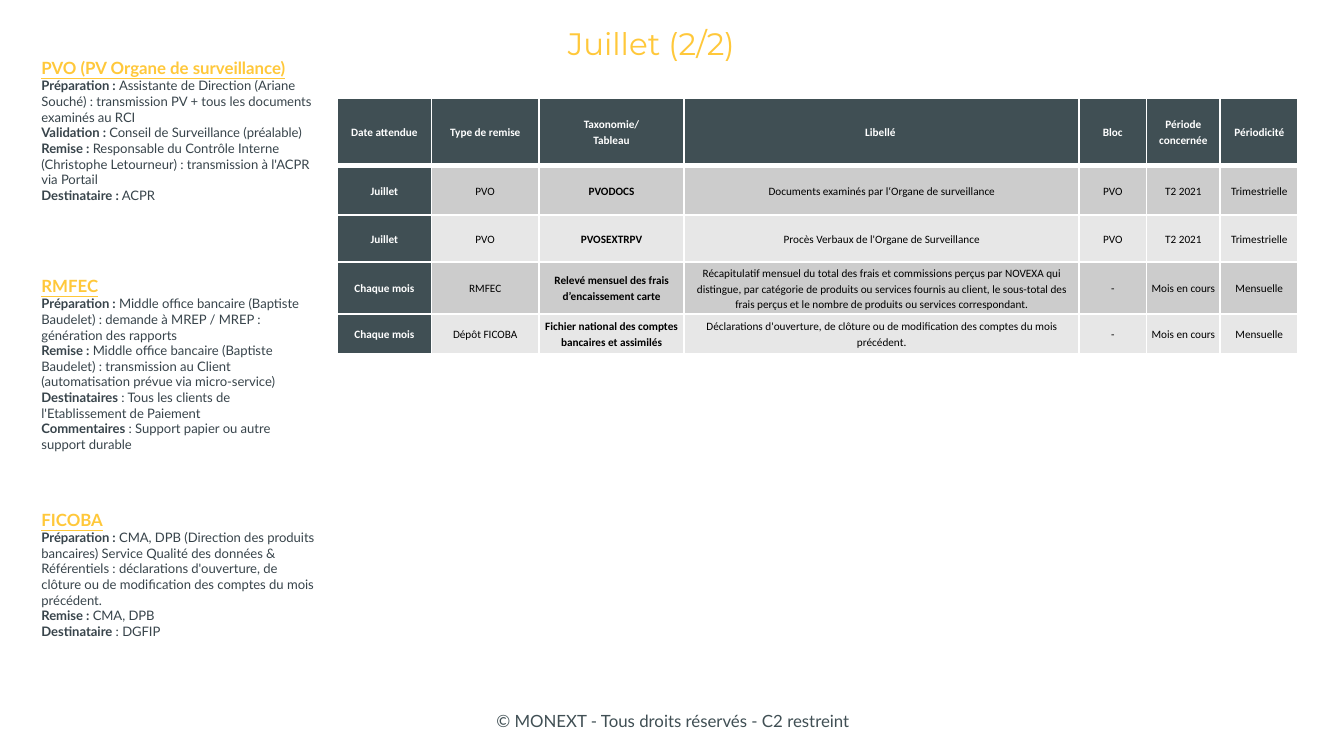
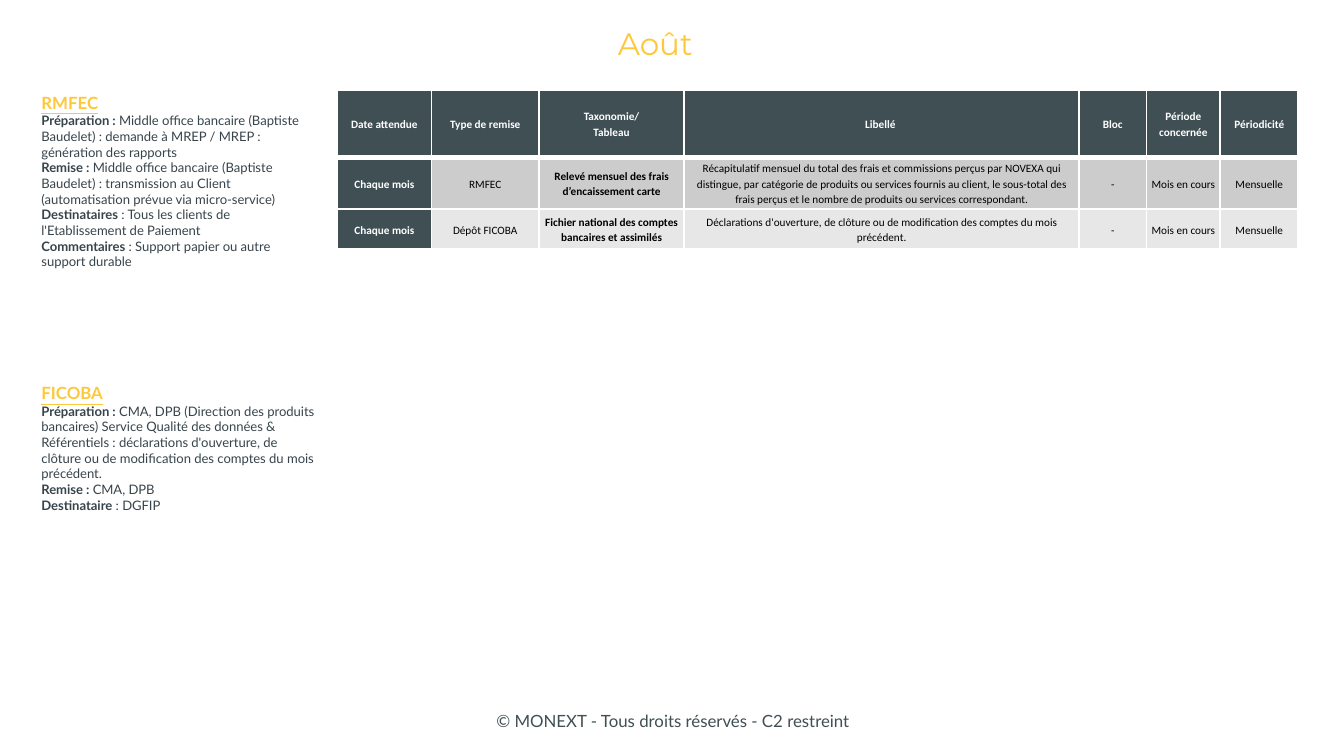
from typing import NamedTuple

from lxml import etree
from pptx import Presentation
from pptx.dml.color import RGBColor
from pptx.enum.text import MSO_ANCHOR, PP_ALIGN
from pptx.oxml.ns import qn
from pptx.util import Emu, Pt

PX = 9144
MIDDLE, TOP = MSO_ANCHOR.MIDDLE, MSO_ANCHOR.TOP
CENTER, LEFT = PP_ALIGN.CENTER, PP_ALIGN.LEFT

YELLOW = RGBColor(0xFF, 0xC8, 0x3A)
SLATE = RGBColor(0x40, 0x4F, 0x54)
INK = RGBColor(0x38, 0x44, 0x4B)
WHITE = RGBColor(0xFF, 0xFF, 0xFF)
BLACK = RGBColor(0, 0, 0)
BANDS = (RGBColor(0xCC, 0xCC, 0xCC), RGBColor(0xE7, 0xE7, 0xE7))

SLIDE_WIDTH = 1000
FOOTER = "© MONEXT - Tous droits réservés - C2 restreint"
HEADERS = ("Date attendue", "Type de remise", "Taxonomie/\nTableau", "Libellé ",
           "Bloc", "Période concernée", "Périodicité")
COLUMN_WIDTHS = (70, 80, 108, 294, 50, 55, 58)
HEADER_HEIGHT = 50
TABLE_LEFT = 251
BOLD_COLUMNS = (0, 2)


class Box(NamedTuple):
    """Place of a text box in px."""
    left: int
    top: int
    width: int
    height: int


class Note(NamedTuple):
    """Side note: a heading and its lines, each a bold label and a plain body."""
    heading: str
    height: int
    lines: tuple[tuple[str, str], ...]
    one_paragraph: bool = False


class Filing(NamedTuple):
    """Table row: its height and the text of its cells."""
    height: int
    cells: tuple[str, ...]


class Month(NamedTuple):
    """Content of one slide; notes are paired with their top."""
    title: str
    notes: tuple[tuple[int, Note], ...]
    table_top: int
    filings: tuple[Filing, ...]


TITLE_BOX = Box(210, 14, 555, 36)
FOOTER_BOX = Box(342, 521, 317, 30)

PVO = Note("PVO (PV Organe de surveillance)", 129, (
    ("Préparation : ", "Assistante de Direction (Ariane Souché) : transmission PV "
     "+ tous les documents examinés au RCI"),
    ("Validation : ", "Conseil de Surveillance (préalable)"),
    ("Remise : ", "Responsable du Contrôle Interne (Christophe Letourneur) : "
     "transmission à l'ACPR via Portail"),
    ("Destinataire :", " ACPR"),
), one_paragraph=True)
RMFEC = Note("RMFEC", 142, (
    ("Préparation :", " Middle office bancaire (Baptiste Baudelet) : demande à MREP "
     "/ MREP : génération des rapports"),
    ("Remise : ", "Middle office bancaire (Baptiste Baudelet) : transmission au "
     "Client (automatisation prévue via micro-service)"),
    ("Destinataires", " : Tous les clients de l'Etablissement de Paiement"),
    ("Commentaires", " : Support papier ou autre support durable"),
))
FICOBA = Note("FICOBA", 107, (
    ("Préparation :", " CMA, DPB (Direction des produits bancaires) Service Qualité "
     "des données & Référentiels : déclarations d'ouverture, de clôture ou de "
     "modification des comptes du mois précédent."),
    ("Remise : ", "CMA, DPB"),
    ("Destinataire", " : DGFIP"),
))

QUARTERLY = ("PVO", "T2 2021", "Trimestrielle")
MONTHLY = ("-", "Mois en cours", "Mensuelle")
QUARTERLY_FILINGS = (
    Filing(37, ("Juillet", "PVO", "PVODOCS",
                "Documents examinés par l‘Organe de surveillance", *QUARTERLY)),
    Filing(35, ("Juillet", "PVO", "PVOSEXTRPV",
                "Procès Verbaux de l'Organe de Surveillance", *QUARTERLY)),
)
MONTHLY_FILINGS = (
    Filing(31, ("Chaque mois", "RMFEC", "Relevé mensuel des frais d’encaissement carte",
                "Récapitulatif mensuel du total des frais et commissions perçus par "
                "NOVEXA qui distingue, par catégorie de produits ou services fournis "
                "au client, le sous-total des frais perçus et le nombre de produits "
                "ou services correspondant.", *MONTHLY)),
    Filing(30, ("Chaque mois", "Dépôt FICOBA",
                "Fichier national des comptes bancaires et assimilés",
                "Déclarations d'ouverture, de clôture ou de modification des comptes "
                "du mois précédent.", *MONTHLY)),
)

MONTHS = (
    Month("Juillet (2/2) ", ((38, PVO), (200, RMFEC), (374, FICOBA)), 73,
          QUARTERLY_FILINGS + MONTHLY_FILINGS),
    Month("Août", ((64, RMFEC), (280, FICOBA)), 67, MONTHLY_FILINGS),
)


def px(length: int) -> Emu:
    """Turn px into EMU."""
    return Emu(length * PX)


def add_span(para, text: str, *, size: float, color: RGBColor, font: str = "Lato",
             bold: bool = False, underline: bool = False) -> None:
    """Append formatted text to a paragraph."""
    span = para.add_run()
    span.text = text
    span.font.name = font
    span.font.size = Pt(size)
    span.font.color.rgb = color
    span.font.bold = bold
    span.font.underline = underline


def add_box(page, place: Box, *, anchor=MIDDLE, align=CENTER):
    """Add a wrapping text box and return its text frame."""
    frame = page.shapes.add_textbox(*map(px, place)).text_frame
    frame.word_wrap = True
    frame.vertical_anchor = anchor
    frame.paragraphs[0].alignment = align
    return frame


def add_note(page, top: int, note: Note) -> None:
    """Draw a side note."""
    frame = add_box(page, Box(21, top, 225, note.height), anchor=TOP, align=LEFT)
    para = frame.paragraphs[0]
    add_span(para, note.heading, size=9, color=YELLOW, bold=True, underline=True)
    for label, body in note.lines:
        if note.one_paragraph:
            para.add_line_break()
        else:
            para = frame.add_paragraph()
        add_span(para, label, size=7, color=INK, bold=True)
        add_span(para, body, size=7, color=INK)


def add_borders(cell, top: int, bottom: int) -> None:
    """Give a cell white borders, with top and bottom widths in points."""
    properties = cell._tc.get_or_add_tcPr()
    for side, width in (("L", 1), ("R", 1), ("T", top), ("B", bottom)):
        line = etree.SubElement(properties, qn(f"a:ln{side}"), w=str(Pt(width)))
        fill = etree.SubElement(line, qn("a:solidFill"))
        etree.SubElement(fill, qn("a:srgbClr"), val=str(WHITE))


def fill_cell(cell, text: str, row: int, column: int) -> None:
    """Style and write one table cell."""
    dark = row == 0 or column == 0
    add_borders(cell, 3 if row == 1 else 1, 3 if row == 0 else 1)
    cell.fill.solid()
    cell.fill.fore_color.rgb = SLATE if dark else BANDS[(row - 1) % 2]
    cell.vertical_anchor = MIDDLE
    cell.margin_left = cell.margin_right = px(3)
    cell.margin_top = cell.margin_bottom = px(2)
    frame = cell.text_frame
    for index, line in enumerate(text.split("\n")):
        para = frame.add_paragraph() if index else frame.paragraphs[0]
        para.alignment = CENTER
        para.line_spacing = 1.15
        add_span(para, line, size=6, font="Calibri", color=WHITE if dark else BLACK,
                 bold=row == 0 or column in BOLD_COLUMNS)


def add_filings(page, top: int, filings: tuple[Filing, ...]) -> None:
    """Draw the table of filings under its header row."""
    rows = (Filing(HEADER_HEIGHT, HEADERS), *filings)
    height = sum(row.height for row in rows)
    table = page.shapes.add_table(len(rows), len(HEADERS), px(TABLE_LEFT), px(top),
                                  px(sum(COLUMN_WIDTHS)), px(height)).table
    table.first_row = table.horz_banding = False
    for column, width in zip(table.columns, COLUMN_WIDTHS):
        column.width = px(width)
    for row_index, row in enumerate(rows):
        table.rows[row_index].height = px(row.height)
        for column_index, text in enumerate(row.cells):
            fill_cell(table.cell(row_index, column_index), text, row_index, column_index)


def add_month(deck, month: Month) -> None:
    """Add the slide of one month."""
    page = deck.slides.add_slide(deck.slide_layouts[6])
    footer = add_box(page, FOOTER_BOX)
    add_span(footer.paragraphs[0], FOOTER, size=9, color=SLATE)
    title = add_box(page, TITLE_BOX)
    add_span(title.paragraphs[0], month.title, size=16.6, color=YELLOW, font="Montserrat")
    for top, note in month.notes:
        add_note(page, top, note)
    add_filings(page, month.table_top, month.filings)


def main() -> None:
    """Build and save the deck."""
    deck = Presentation()
    deck.slide_width = px(SLIDE_WIDTH)
    deck.slide_height = Emu(px(SLIDE_WIDTH) * 9 // 16)
    for month in MONTHS:
        add_month(deck, month)
    deck.save("out.pptx")


if __name__ == "__main__":
    main()
